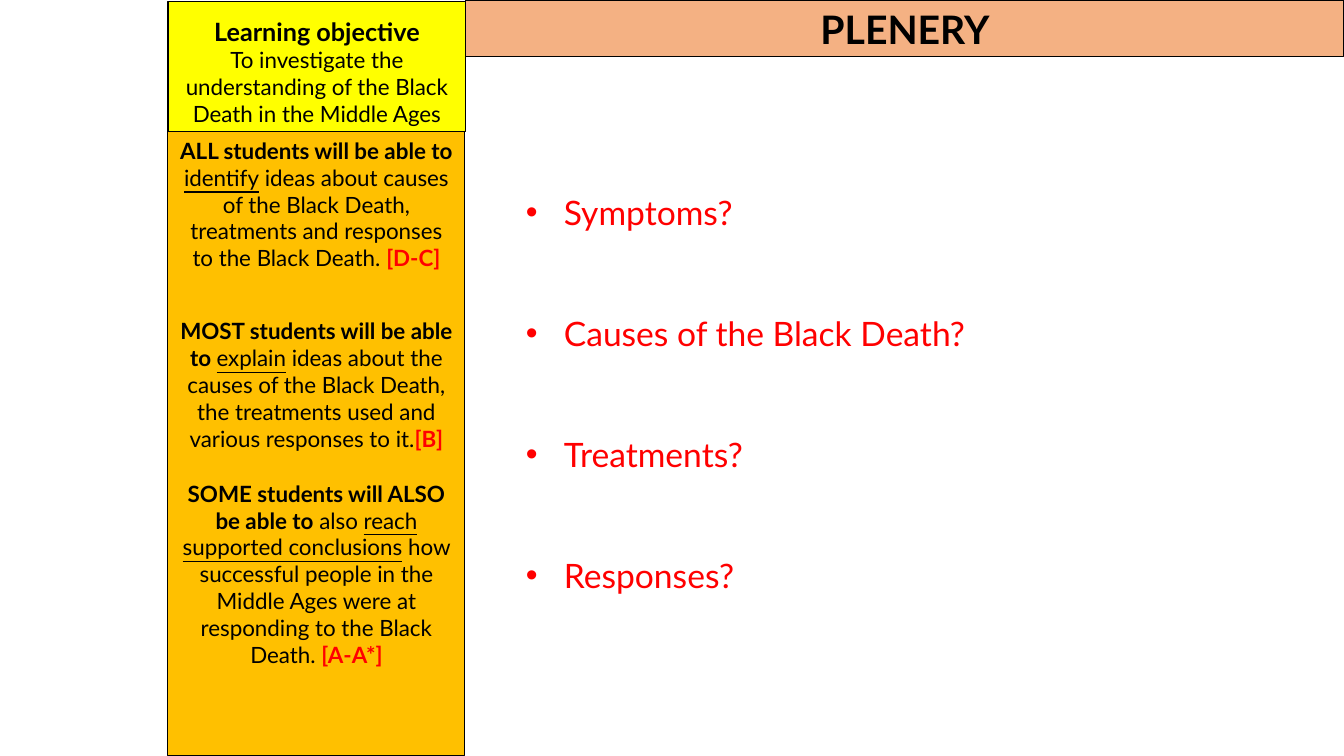
from dataclasses import dataclass

from lxml.etree import SubElement
from pptx import Presentation
from pptx.dml.color import RGBColor
from pptx.enum.shapes import MSO_SHAPE
from pptx.enum.text import MSO_ANCHOR, MSO_AUTO_SIZE, PP_ALIGN
from pptx.oxml.ns import qn
from pptx.util import Emu, Pt

PX = 914400 / 100.8


@dataclass(frozen=True)
class Theme:
    font: str = "Lato"
    black: RGBColor = RGBColor(0x00, 0x00, 0x00)
    red: RGBColor = RGBColor(0xFF, 0x00, 0x00)
    yellow: RGBColor = RGBColor(0xFF, 0xFF, 0x00)
    amber: RGBColor = RGBColor(0xFF, 0xC0, 0x00)
    peach: RGBColor = RGBColor(0xF4, 0xB1, 0x83)
    title_size: int = 28
    question_size: int = 24
    heading_size: int = 18
    body_size: int = 16
    border: float = 0.75


THEME = Theme()

# Each outcome: space before in points, then (text, style) runs
OUTCOMES = [
    (0, [("ALL students will be able to ", "bold"),
         ("identify", "underline"),
         (" ideas about causes of the Black Death, treatments and responses "
          "to the Black Death. ", "plain"),
         ("[D-C]", "grade")]),
    (33, [("MOST students will be able to ", "bold"),
          ("explain", "underline"),
          (" ideas about the causes of the Black Death, the treatments used "
           "and various responses to it.", "plain"),
          ("[B]", "grade")]),
    (20, [("SOME students will ALSO be able to", "bold"),
          (" also ", "plain"),
          ("reach supported conclusions", "underline"),
          (" how successful people in the Middle Ages were at responding to "
           "the Black Death. ", "plain"),
          ("[A-A*]", "grade")]),
]
QUESTIONS = ["Symptoms?", "Causes of the Black Death?", "Treatments?", "Responses?"]


def px(value):
    return Emu(round(value * PX))


def place(shape, left, top, width, height):
    shape.left, shape.top = px(left), px(top)
    shape.width, shape.height = px(width), px(height)


def paint(shape, fill):
    shape.fill.solid()
    shape.fill.fore_color.rgb = fill
    shape.line.color.rgb = THEME.black
    shape.line.width = Pt(THEME.border)


def format_run(run, size, style="plain"):
    font = run.font
    font.name, font.size = THEME.font, Pt(size)
    font.bold = style in ("bold", "grade")
    font.underline = style == "underline"
    font.color.rgb = THEME.red if style in ("grade", "question") else THEME.black


def next_paragraph(text_frame, index):
    return text_frame.add_paragraph() if index else text_frame.paragraphs[0]


def add_panel(slide, box, fill, anchor, paragraphs):
    """Bordered box; paragraphs are (space before, size, runs)."""
    shape = slide.shapes.add_shape(MSO_SHAPE.RECTANGLE, *map(px, box))
    shape.shadow.inherit = False
    paint(shape, fill)
    text_frame = shape.text_frame
    text_frame.word_wrap = True
    text_frame.vertical_anchor = anchor
    for index, (space, size, runs) in enumerate(paragraphs):
        paragraph = next_paragraph(text_frame, index)
        paragraph.alignment = PP_ALIGN.CENTER
        paragraph.space_before = Pt(space)
        for text, style in runs:
            run = paragraph.add_run()
            run.text = text
            format_run(run, size, style)


def add_title(slide, text, box):
    title = slide.shapes.title
    place(title, *box)
    paint(title, THEME.peach)
    text_frame = title.text_frame
    text_frame.text = text
    text_frame.auto_size = MSO_AUTO_SIZE.NONE
    text_frame.vertical_anchor = MSO_ANCHOR.TOP
    paragraph = text_frame.paragraphs[0]
    paragraph.alignment = PP_ALIGN.CENTER
    format_run(paragraph.runs[0], THEME.title_size, "bold")


def add_bullet(paragraph, indent, hanging):
    properties = paragraph._p.get_or_add_pPr()
    properties.set("marL", str(px(indent)))
    properties.set("indent", str(-px(hanging)))
    SubElement(properties, qn("a:buFont"), typeface="Arial")
    SubElement(properties, qn("a:buChar"), char="•")


def add_questions(slide, questions, box):
    text_frame = slide.shapes.add_textbox(*map(px, box)).text_frame
    text_frame.word_wrap = True
    text_frame.margin_top = px(45)
    for index, question in enumerate(questions):
        paragraph = next_paragraph(text_frame, index)
        paragraph.text = question
        # Two line heights between questions
        paragraph.space_before = Pt(2.4 * THEME.question_size if index else 0)
        add_bullet(paragraph, indent=88, hanging=38)
        format_run(paragraph.runs[0], THEME.question_size, "question")


def main():
    presentation = Presentation()
    presentation.slide_width, presentation.slide_height = px(1344), px(756)
    slide = presentation.slides.add_slide(presentation.slide_layouts[5])

    # Title band
    add_title(slide, "PLENERY", (466, 0, 878, 57))

    # Learning objective
    add_panel(slide, (168, 2, 298, 130), THEME.yellow, MSO_ANCHOR.BOTTOM, [
        (0, THEME.heading_size, [("Learning objective", "bold")]),
        (0, THEME.body_size, [("To investigate the understanding of the Black "
                               "Death in the Middle Ages", "plain")]),
    ])

    # Graded outcomes
    add_panel(slide, (168, 132, 297, 624), THEME.amber, MSO_ANCHOR.TOP,
              [(space, THEME.body_size, runs) for space, runs in OUTCOMES])

    # Review questions
    add_questions(slide, QUESTIONS, (466, 147, 687, 458))

    presentation.save("out.pptx")


if __name__ == "__main__":
    main()
